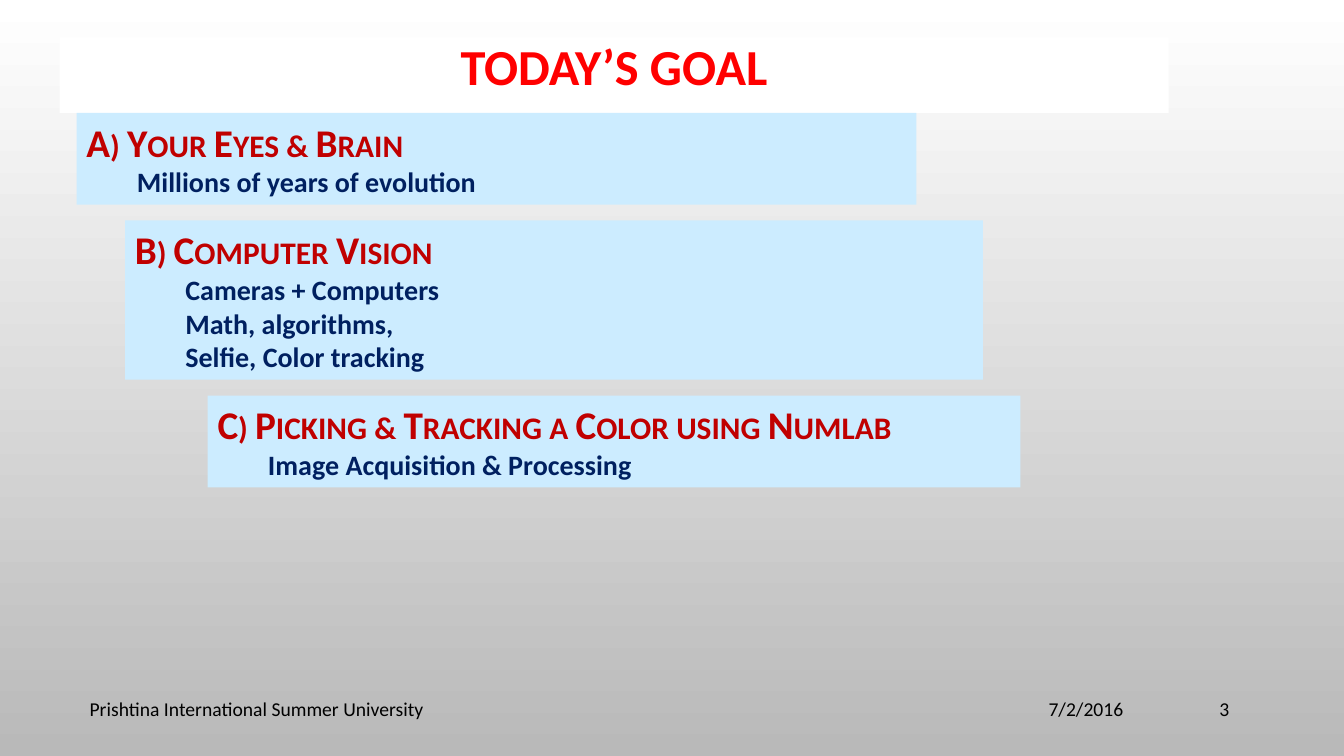
from pptx import Presentation
from pptx.dml.color import RGBColor
from pptx.enum.shapes import MSO_SHAPE
from pptx.enum.text import MSO_ANCHOR, PP_ALIGN
from pptx.util import Inches, Pt

WIDTH, HEIGHT = Inches(13.33), Inches(7.5)
FONT = "Calibri"
PANEL_TOP, PANEL_GAP = 14.93, 2.1
HEADING_ROW, DETAIL_ROW = 7.66, 4.47

GOALS = [
    (5.7, 62.49, "A) Your Eyes & Brain", ["Millions of years of evolution"]),
    (9.3, 63.84, "B) Computer Vision",
     ["Cameras + Computers", "Math, algorithms,", "Selfie, Color tracking"]),
    (15.45, 60.47, "C) Picking & Tracking a Color using Numlab",
     ["Image Acquisition & Processing"]),
]

FOOTERS = [
    (5.93, 54.76, "Prishtina International Summer University", PP_ALIGN.LEFT),
    (61.82, 22.51, "7/2/2016", PP_ALIGN.RIGHT),
    (85.9, 6.3, "3", PP_ALIGN.RIGHT),
]


def color(value):
    return RGBColor.from_string(value)


def place(left, top, width, height):
    return (round(WIDTH * left / 100), round(HEIGHT * top / 100),
            round(WIDTH * width / 100), round(HEIGHT * height / 100))


def write(p, text, size=14, fill="000000", bold=False, align=PP_ALIGN.LEFT,
          small_caps=False, indent=0, spacing=None):
    p.alignment = align
    if spacing:
        p.line_spacing = spacing
    if indent:
        p.level = 1
        pPr = p._p.get_or_add_pPr()
        pPr.set("marL", str(Inches(indent)))
        pPr.set("indent", "0")
    r = p.add_run()
    r.text = text
    r.font.name = FONT
    r.font.size = Pt(size)
    r.font.bold = bold
    r.font.color.rgb = color(fill)
    if small_caps:
        r._r.get_or_add_rPr().set("cap", "small")


def add_panel(s, area, fill):
    sp = s.shapes.add_shape(MSO_SHAPE.RECTANGLE, *place(*area))
    sp.shadow.inherit = False
    sp.fill.solid()
    sp.fill.fore_color.rgb = color(fill)
    sp.line.fill.background()
    tf = sp.text_frame
    tf.word_wrap = True
    tf.vertical_anchor = MSO_ANCHOR.TOP
    return tf


def add_goal(s, left, top, width, height, heading, details):
    tf = add_panel(s, (left, top, width, height), "CCECFF")
    write(tf.paragraphs[0], heading, size=28, fill="C00000", bold=True,
          small_caps=True)
    for detail in details:
        write(tf.add_paragraph(), detail, size=20, fill="002060", bold=True,
              indent=0.5)


def add_footer(s, left, width, text, align):
    tf = s.shapes.add_textbox(*place(left, 91.07, width, 5.33)).text_frame
    tf.word_wrap = True
    tf.vertical_anchor = MSO_ANCHOR.MIDDLE
    write(tf.paragraphs[0], text, align=align)


def paint_background(s):
    fill = s.background.fill
    fill.gradient()
    fill.gradient_angle = 270
    for stop, shade in zip(fill.gradient_stops, ("FFFFFF", "B9B9B9")):
        stop.color.rgb = color(shade)


def main():
    prs = Presentation()
    prs.slide_width, prs.slide_height = WIDTH, HEIGHT
    s = prs.slides.add_slide(prs.slide_layouts[6])
    paint_background(s)

    title = add_panel(s, (4.43, 4.93, 82.52, 10), "FFFFFF")
    write(title.paragraphs[0], "TODAY’S GOAL", size=36, fill="FF0000",
          bold=True, align=PP_ALIGN.CENTER, spacing=0.9)

    top = PANEL_TOP
    for left, width, heading, details in GOALS:
        height = HEADING_ROW + DETAIL_ROW * len(details)
        add_goal(s, left, top, width, height, heading, details)
        top += height + PANEL_GAP

    for footer in FOOTERS:
        add_footer(s, *footer)

    prs.save("out.pptx")


if __name__ == "__main__":
    main()
